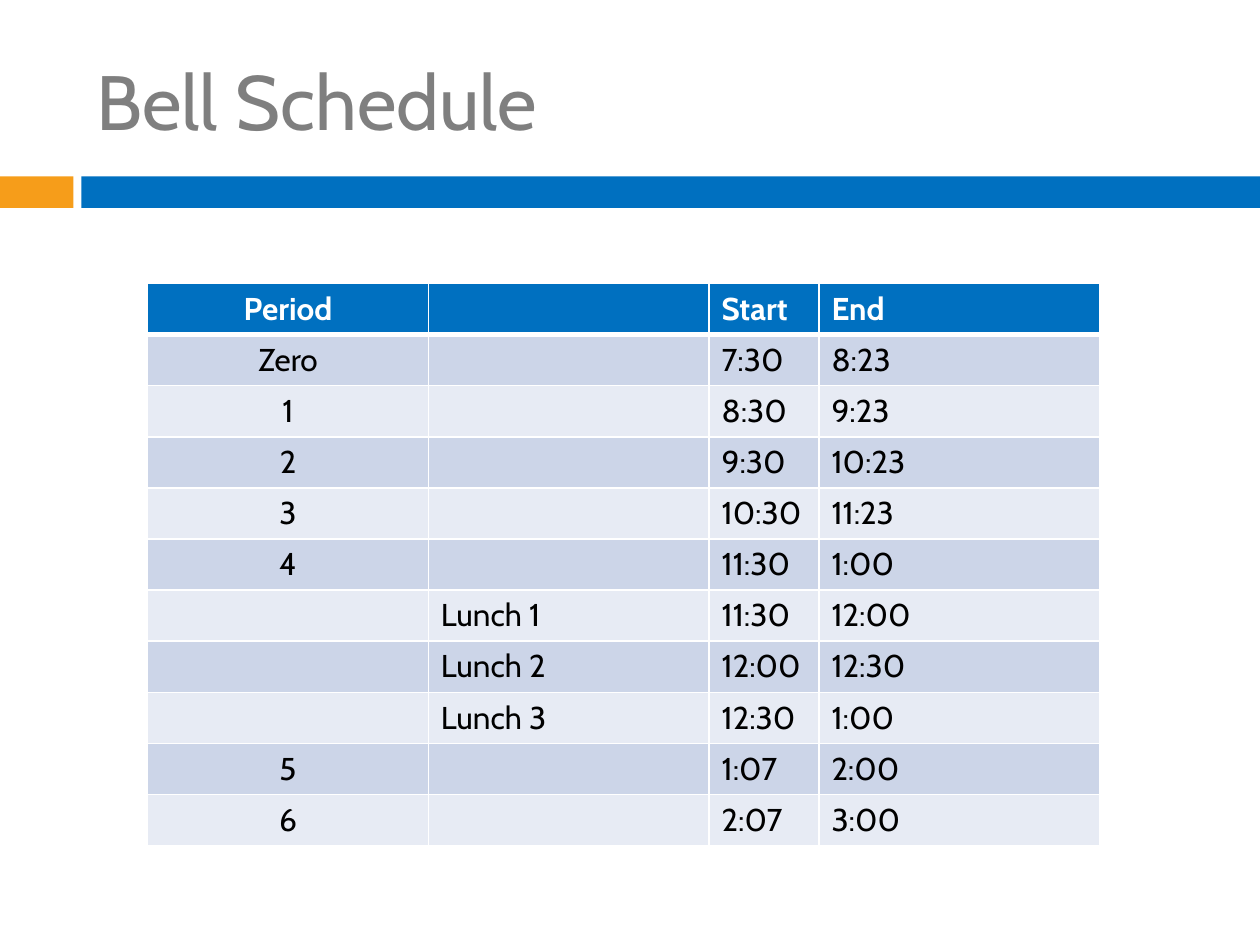
from pptx import Presentation
from pptx.dml.color import RGBColor
from pptx.enum.shapes import MSO_SHAPE as Shape
from pptx.enum.text import MSO_ANCHOR as Anchor, PP_ALIGN as Align
from pptx.oxml import parse_xml
from pptx.oxml.ns import nsdecls
from pptx.util import Pt

FONT = "Cabin"
WHITE, BLACK, GRAY = "FFFFFF", "000000", "7F7F7F"
BLUE, ORANGE = "0070C0", "F69D1A"
BANDS = ("CCD5E8", "E7EBF4")

COLUMN_WIDTHS = (160.4, 160.4, 62.8, 160.4)
ROW_HEIGHT = 29.2
SCHEDULE = [
    ("Period", "", "Start", "End"),
    ("Zero", "", "7:30", "8:23"),
    ("1", "", "8:30", "9:23"),
    ("2", "", "9:30", "10:23"),
    ("3", "", "10:30", "11:23"),
    ("4", "", "11:30", "1:00"),
    ("", "Lunch 1", "11:30", "12:00"),
    ("", "Lunch 2", "12:00", "12:30"),
    ("", "Lunch 3", "12:30", "1:00"),
    ("5", "", "1:07", "2:00"),
    ("6", "", "2:07", "3:00"),
]


def rgb(color):
    return RGBColor.from_string(color)


def write_text(text_frame, text, size=18, color=BLACK, bold=False, align=Align.LEFT):
    paragraph = text_frame.paragraphs[0]
    paragraph.alignment = align
    run = paragraph.add_run()
    run.text = text
    run.font.name = FONT
    run.font.size = Pt(size)
    run.font.bold = bold
    run.font.color.rgb = rgb(color)


def add_bar(slide, left, width, color):
    bar = slide.shapes.add_shape(Shape.RECTANGLE, Pt(left), Pt(100.8), Pt(width), Pt(18))
    bar.shadow.inherit = False
    bar.fill.solid()
    bar.fill.fore_color.rgb = rgb(color)
    bar.line.fill.background()


def add_title(slide, text):
    box = slide.shapes.add_textbox(Pt(48), Pt(18), Pt(642), Pt(78))
    box.text_frame.word_wrap = True
    box.text_frame.vertical_anchor = Anchor.MIDDLE
    write_text(box.text_frame, text, size=44, color=GRAY)


def set_border(cell, side, width):
    cell._tc.get_or_add_tcPr().append(parse_xml(
        f'<a:ln{side} {nsdecls("a")} w="{Pt(width)}"><a:solidFill>'
        f'<a:srgbClr val="{WHITE}"/></a:solidFill></a:ln{side}>'))


def style_cell(cell, row, fill):
    # A thicker rule separates the header from the body
    top = 3 if row == 1 else 1
    bottom = 3 if row == 0 else 1
    for side, width in (("L", 1), ("R", 1), ("T", top), ("B", bottom)):
        set_border(cell, side, width)
    cell.fill.solid()
    cell.fill.fore_color.rgb = rgb(fill)


def add_schedule(slide, left, top):
    frame = slide.shapes.add_table(
        len(SCHEDULE), len(COLUMN_WIDTHS), Pt(left), Pt(top),
        Pt(sum(COLUMN_WIDTHS)), Pt(ROW_HEIGHT * len(SCHEDULE)))
    table = frame.table
    for column, width in zip(table.columns, COLUMN_WIDTHS):
        column.width = Pt(width)
    for row, values in enumerate(SCHEDULE):
        table.rows[row].height = Pt(ROW_HEIGHT)
        header = row == 0
        fill = BLUE if header else BANDS[(row - 1) % 2]
        for column, value in enumerate(values):
            cell = table.cell(row, column)
            style_cell(cell, row, fill)
            if value:
                write_text(cell.text_frame, value, bold=header,
                           color=WHITE if header else BLACK,
                           align=Align.CENTER if column == 0 else Align.LEFT)


def main():
    presentation = Presentation()
    presentation.slide_width, presentation.slide_height = Pt(720), Pt(540)
    slide = presentation.slides.add_slide(presentation.slide_layouts[6])

    # Divider bars under the title
    add_bar(slide, 0, 42, ORANGE)
    add_bar(slide, 46.5, 673.5, BLUE)

    # Title and timetable
    add_title(slide, "Bell Schedule")
    add_schedule(slide, 84.4, 162)

    presentation.save("out.pptx")


if __name__ == "__main__":
    main()
